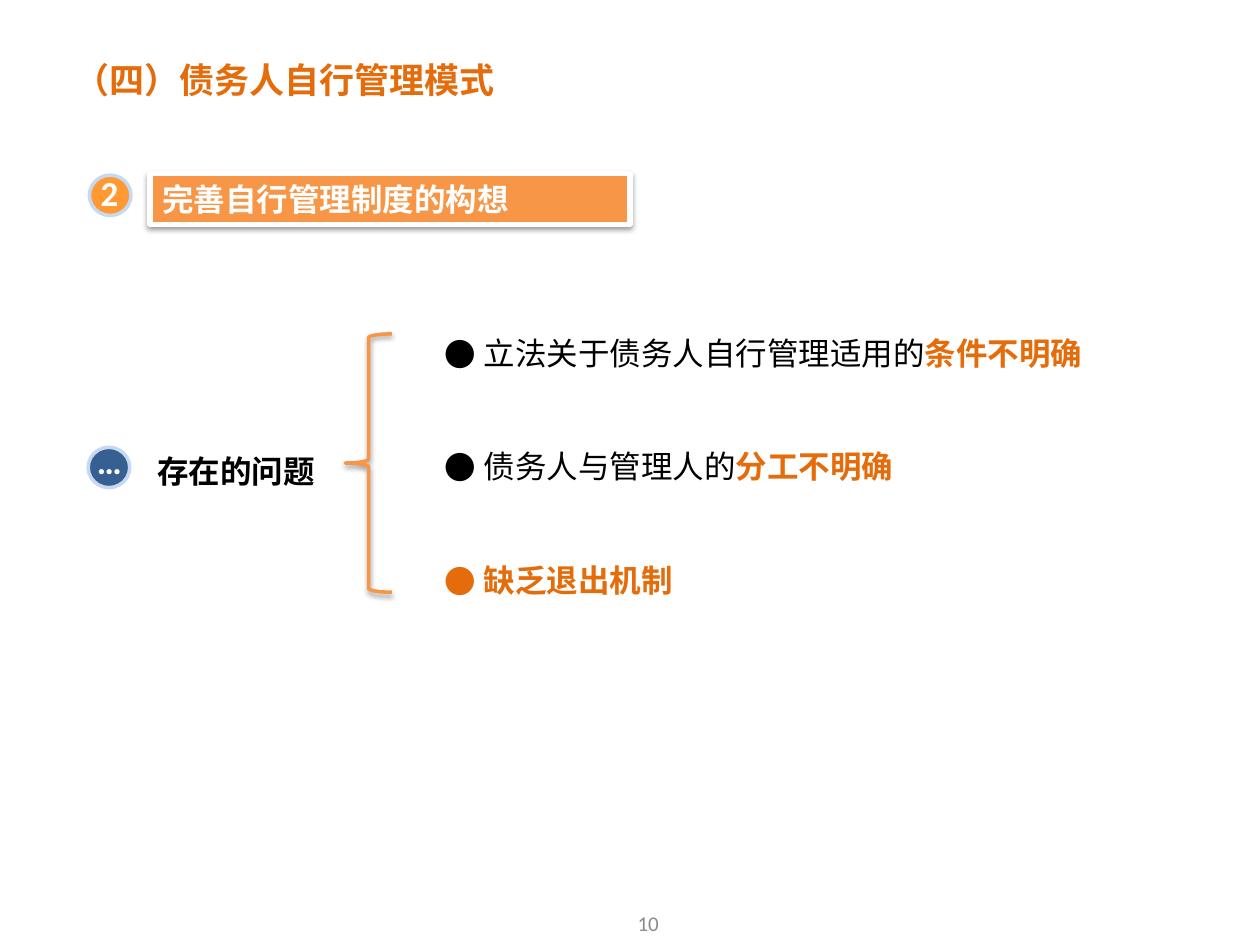
from lxml import etree
from pptx import Presentation
from pptx.dml.color import RGBColor
from pptx.enum.shapes import MSO_SHAPE
from pptx.enum.text import MSO_ANCHOR, MSO_AUTO_SIZE, PP_ALIGN
from pptx.oxml.ns import qn
from pptx.util import Inches, Pt

RECT, OVAL, BRACE = MSO_SHAPE.RECTANGLE, MSO_SHAPE.OVAL, MSO_SHAPE.LEFT_BRACE
LEFT, CENTER = PP_ALIGN.LEFT, PP_ALIGN.CENTER
TOP, MIDDLE = MSO_ANCHOR.TOP, MSO_ANCHOR.MIDDLE
NO_FIT = MSO_AUTO_SIZE.NONE

CJK, LATIN = "Noto Sans CJK SC", "Calibri"
ACCENT, ORANGE, BLACK, WHITE = "E46C0A", "F79646", "000000", "FFFFFF"
RING, LINE_PITCH, INDENT = "C6D9F1", Pt(32.4), Inches(0.31)
PROBLEMS = [
    ("立法关于债务人自行管理适用的", "条件不明确"),
    ("债务人与管理人的", "分工不明确"),
    ("", "缺乏退出机制"),
]


def rgb(color):
    """Return the colour for a hex string."""
    return RGBColor.from_string(color)


def add_child(parent, tag, **attrs):
    """Append a DrawingML element with its attributes."""
    return etree.SubElement(parent, qn(tag), {k: str(v) for k, v in attrs.items()})


def place(sp, left, top, width, height):
    """Move and size a placeholder in inches."""
    sp.left, sp.top = Inches(left), Inches(top)
    sp.width, sp.height = Inches(width), Inches(height)


def set_font(p, size, name, color=None, bold=None):
    """Format the whole paragraph, East Asian typeface included."""
    font = p.font
    font.size, font.name, font.bold = Pt(size), name, bold
    if color:
        font.color.rgb = rgb(color)
    add_child(p._p.pPr.find(qn("a:defRPr")), "a:ea", typeface=name)


def write(sp, text, size, name, color, bold=True, align=LEFT, anchor=TOP, wrap=True):
    """Write one formatted paragraph in a shape."""
    tf = sp.text_frame
    tf.word_wrap, tf.auto_size, tf.vertical_anchor = wrap, NO_FIT, anchor
    p = tf.paragraphs[0]
    p.text, p.alignment = text, align
    set_font(p, size, name, color, bold)


def add_text(shapes, box, *args, **kwargs):
    """Add a text box."""
    write(shapes.add_textbox(*map(Inches, box)), *args, **kwargs)


def add_shape(shapes, kind, box, fill, line, width, shadow=False):
    """Add an outlined preset shape, filled or shadowed on request."""
    sp = shapes.add_shape(kind, *map(Inches, box))
    sp.shadow.inherit = False
    if fill:
        sp.fill.solid()
        sp.fill.fore_color.rgb = rgb(fill)
    else:
        sp.fill.background()
    sp.line.color.rgb, sp.line.width = rgb(line), Pt(width)
    if shadow:
        effects = sp._element.spPr.find(qn("a:effectLst"))
        outer = add_child(effects, "a:outerShdw", blurRad=Pt(3.1), dist=Pt(1.6),
                          dir=90 * 60000, rotWithShape=0)
        add_child(add_child(outer, "a:srgbClr", val=BLACK), "a:alpha", val=38000)
    return sp


def add_badge(slide, label, fill, circle, label_at):
    """Add a ringed circle grouped with its label."""
    shapes = slide.shapes.add_group_shape().shapes
    add_shape(shapes, OVAL, (*circle, 0.33, 0.32), fill, RING, 2)
    add_text(shapes, (*label_at, 1.23, 0.44), label, 20, LATIN, WHITE)


def add_problems(sp, problems):
    """Fill the body with bullets that end in an emphasised phrase."""
    tf = sp.text_frame
    tf.auto_size, tf.vertical_anchor = NO_FIT, TOP
    for i, phrases in enumerate(problems):
        p = tf.add_paragraph() if i else tf.paragraphs[0]
        p.line_spacing, p.space_before = LINE_PITCH, LINE_PITCH if i else Pt(0)
        pPr = p._p.get_or_add_pPr()
        pPr.set("marL", str(INDENT))
        pPr.set("indent", str(-INDENT))
        add_child(pPr, "a:buFont", typeface=CJK)
        add_child(pPr, "a:buChar", char="●")
        set_font(p, 18, CJK)
        for text, color, bold in zip(phrases, (BLACK, ACCENT), (False, True)):
            if text:
                r = p.add_run()
                r.text, r.font.bold = text, bold
                r.font.color.rgb = rgb(color)


def main():
    """Build the slide."""
    prs = Presentation()
    prs.slide_width, prs.slide_height = Inches(10), Inches(7.5)
    slide = prs.slides.add_slide(prs.slide_layouts[1])
    shapes = slide.shapes
    title, body = slide.placeholders

    place(title, 0.51, 0.42, 3.53, 0.42)
    write(title, "（四）债务人自行管理模式", 20, CJK, ACCENT, anchor=MIDDLE, wrap=False)
    title.text_frame.margin_left = title.text_frame.margin_right = Inches(0.08)

    banner = add_shape(shapes, RECT, (1.19, 1.38, 3.81, 0.4), ORANGE, WHITE, 3, shadow=True)
    write(banner, "完善自行管理制度的构想", 18, CJK, WHITE)
    add_badge(slide, "2", "FF9933", (0.71, 1.39), (0.7, 1.31))

    add_badge(slide, "…", "376092", (0.7, 3.55), (0.67, 3.44))
    add_text(shapes, (1.15, 3.54, 1.96, 0.4), "存在的问题", 18, CJK, BLACK)
    add_shape(shapes, BRACE, (2.74, 2.65, 0.37, 2.05), None, ORANGE, 2, shadow=True)
    place(body, 3.43, 2.45, 5.79, 2.64)
    add_problems(body, PROBLEMS)

    add_text(shapes, (3.98, 7.13, 2.33, 0.4), "10", 12, LATIN, "8C8C8C",
             bold=False, align=CENTER, anchor=MIDDLE)
    prs.save("out.pptx")


if __name__ == "__main__":
    main()
